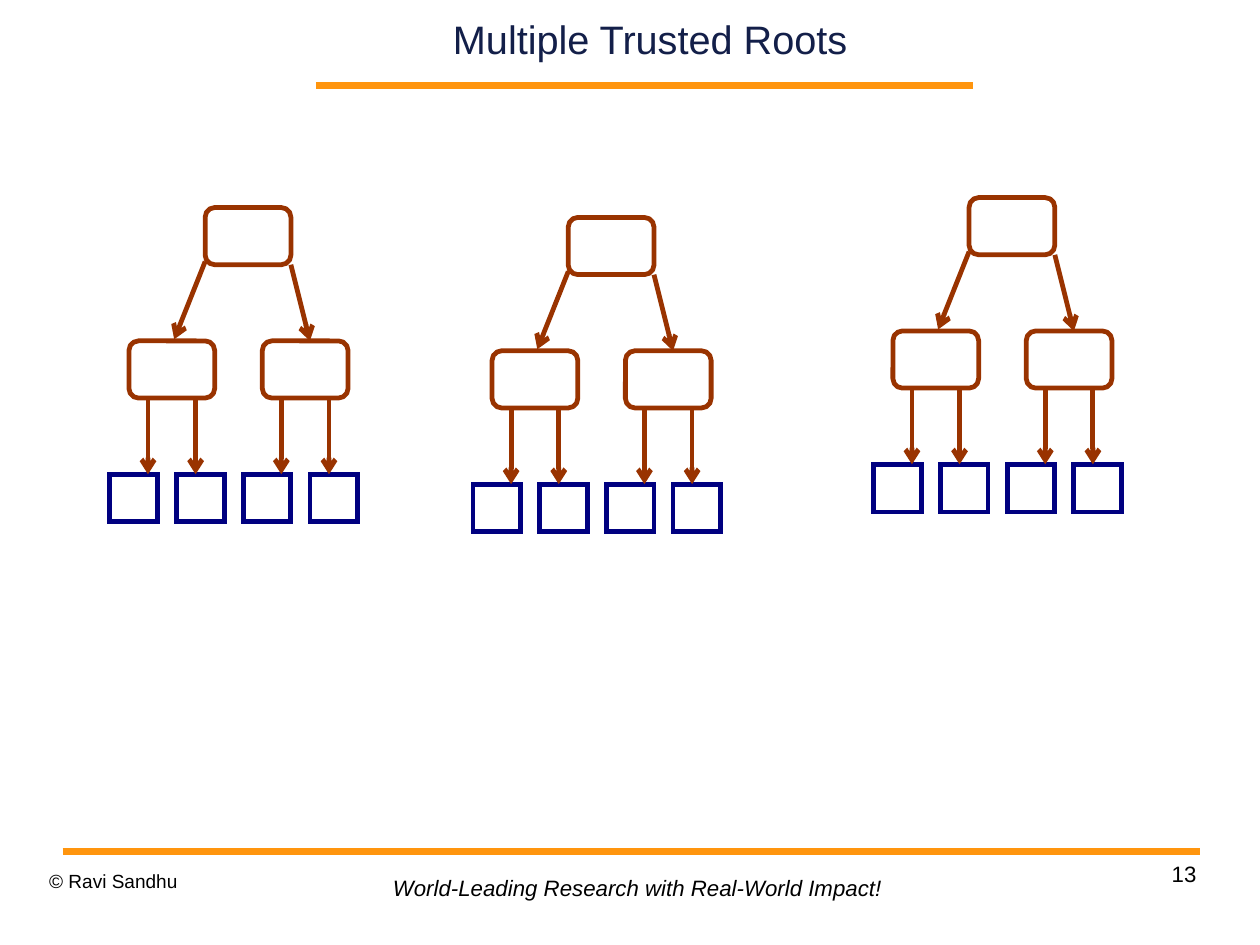
from lxml.etree import SubElement as Sub
from pptx import Presentation
from pptx.dml.color import RGBColor as RGB
from pptx.enum.shapes import MSO_CONNECTOR as Link, MSO_SHAPE as Kind
from pptx.enum.text import MSO_ANCHOR as Anchor, MSO_AUTO_SIZE as Auto, PP_ALIGN as Align
from pptx.oxml.ns import qn
from pptx.util import Pt

HUES = {"rule": "FF950E", "node": "993300", "leaf": "000080",
        "title": "131F49", "text": "000000"}

# Left and top of each tree
TREES = [(298, 137), (550.5, 124.5), (69.25, 130.75)]

NODE = (54, 36)
LEAF = (30, 30)
STEP = 84   # from one level to the next
PITCH = 42  # from one leaf to the next


def set_line(shape, hue, width):
    shape.line.color.rgb = RGB.from_string(HUES[hue])
    shape.line.width = Pt(width)
    return shape.line._get_or_add_ln()


def add_box(group, kind, x, y, size, hue):
    box = group.shapes.add_shape(kind, Pt(x), Pt(y), Pt(size[0]), Pt(size[1]))
    box.shadow.inherit = False
    box.fill.background()
    edge = set_line(box, hue, 3)
    if kind == Kind.RECTANGLE:
        Sub(edge, qn("a:miter"), lim="800000")


def add_line(shapes, start, end, hue, width, arrow=False):
    line = shapes.add_connector(Link.STRAIGHT, *map(Pt, start + end))
    edge = set_line(line, hue, width)
    if arrow:
        Sub(edge, qn("a:tailEnd"), type="arrow")
    Sub(line._element.spPr, qn("a:effectLst"))


def add_text(slide, text, area, size, hue="text", align=Align.LEFT,
             anchor=Anchor.TOP, pad=(0, 0), wrap=True, italic=False, space=1.0):
    box = slide.shapes.add_textbox(*map(Pt, area))
    frame = box.text_frame
    frame.word_wrap = wrap
    frame.auto_size = Auto.NONE if wrap else Auto.SHAPE_TO_FIT_TEXT
    frame.vertical_anchor = anchor
    frame.margin_left = frame.margin_right = Pt(pad[0])
    frame.margin_top = frame.margin_bottom = Pt(pad[1])
    para = frame.paragraphs[0]
    para.text = text
    para.alignment = align
    para.line_spacing = space
    font = para.font
    font.name = "Arial"
    font.size = Pt(size)
    font.italic = italic
    font.color.rgb = RGB.from_string(HUES[hue])


def add_tree(slide, x, y):
    group = slide.shapes.add_group_shape()
    mid, low = y + STEP, y + 2 * STEP
    sides = (x + 12, x + 96)

    # Boxes: root, two nodes, four leaves
    for left, top in [(x + 60, y)] + [(side, mid) for side in sides]:
        add_box(group, Kind.ROUNDED_RECTANGLE, left, top, NODE, "node")
    for i in range(4):
        add_box(group, Kind.RECTANGLE, x + i * PITCH, low, LEAF, "leaf")

    # Arrows from the root corners, then from the nodes to the leaves
    arrows = [((x + 60, y + 34), (x + 40.5, mid - 1)),
              ((x + 114, y + 36), (x + 126, mid))]
    arrows += [((side + dx, mid + NODE[1]), (side + dx, low))
               for side in sides for dx in (12, 42)]
    for start, end in arrows:
        add_line(group.shapes, start, end, "node", 3, True)


def main():
    deck = Presentation()
    deck.slide_width, deck.slide_height = Pt(793.75), Pt(595.25)
    slide = deck.slides.add_slide(deck.slide_layouts[6])

    # Rules and footer
    add_line(slide.shapes, (199, 54), (613, 54), "rule", 4.31)
    add_line(slide.shapes, (39.4, 536.2), (756, 536.2), "rule", 4.31)
    add_text(slide, "13", (568.8, 542, 185, 41), 14, align=Align.RIGHT, space=1.01)
    add_text(slide, "© Ravi Sandhu", (31, 547.7, 185, 31), 12, space=1.01)
    add_text(slide, "World-Leading Research with Real-World Impact!",
             (241, 548, 330, 24), 14, pad=(6.5, 3), wrap=False, italic=True)

    # Title
    add_text(slide, "Multiple Trusted Roots", (205, 4, 409, 40), 25, "title",
             Align.CENTER, Anchor.MIDDLE)

    # Trees
    for x, y in TREES:
        add_tree(slide, x, y)

    deck.save("out.pptx")


if __name__ == "__main__":
    main()
